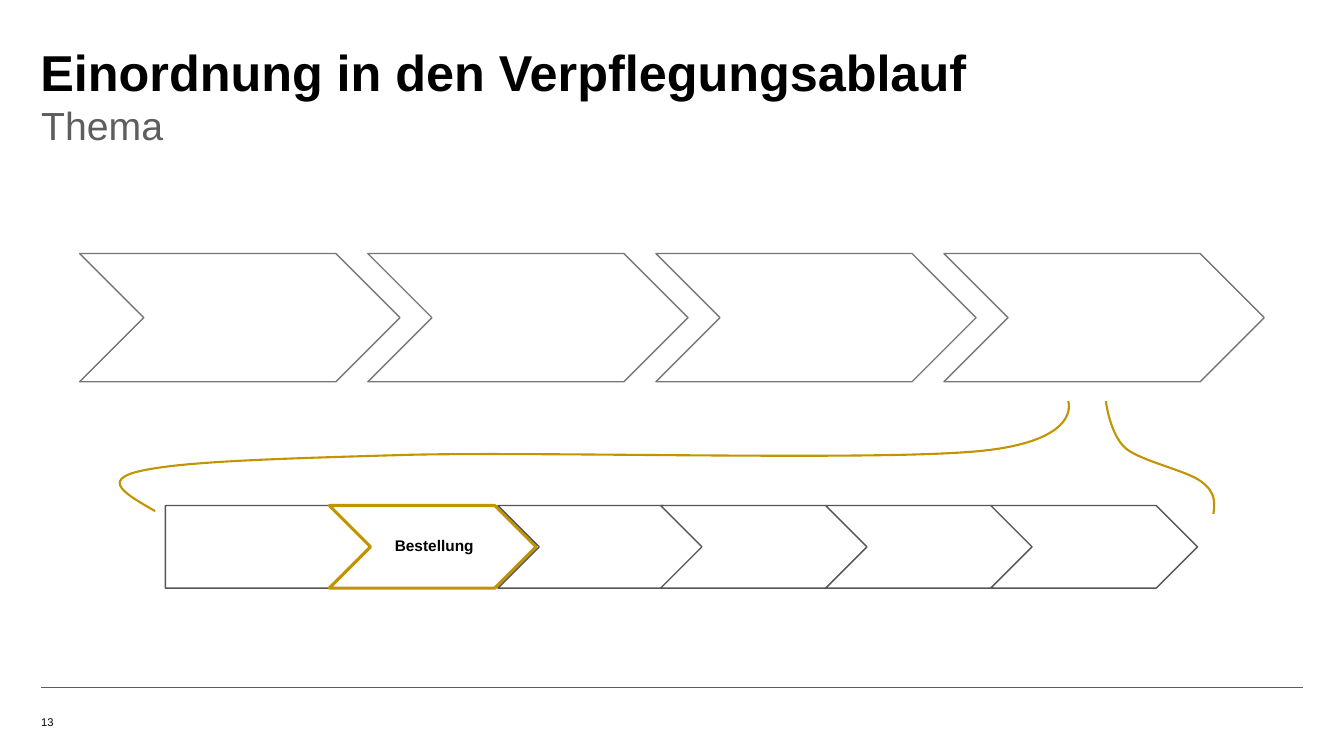
from dataclasses import dataclass

from lxml import etree
from pptx import Presentation
from pptx.dml.color import RGBColor
from pptx.enum.shapes import MSO_CONNECTOR, MSO_SHAPE
from pptx.enum.text import MSO_ANCHOR as Anchor, PP_ALIGN as Align
from pptx.oxml.ns import qn
from pptx.util import Cm, Pt


@dataclass(frozen=True)
class Theme:
    font: str = "Arial"
    black: str = "000000"
    white: str = "FFFFFF"
    muted: str = "5E5E5E"
    phase_line: str = "777777"
    step_line: str = "555555"
    accent: str = "C29401"
    title_size: int = 36
    subtitle_size: int = 28
    step_size: int = 11
    number_size: int = 8


THEME = Theme()
MARGIN = 1.04
STEP_LEFT, STEP_TOP, STEP_PITCH = 4.17, 12.74, 4.16
STEP_WIDTH, STEP_HEIGHT = 5.21, 2.08
STEP_COUNT, ORDER_STEP = 6, 1
STEP_SHIFTS = {ORDER_STEP: -0.03, ORDER_STEP + 1: 0.06}

LEFT_BRACE = (
    (3.02, 10.11, 23.9, 2.77),
    (3.91, 12.88),
    [
        ((3.2, 12.47), (2.49, 12.09), (3.58, 11.86)),
        ((4.65, 11.63), (6.86, 11.56), (10.36, 11.46)),
        ((13.84, 11.38), (21.79, 11.61), (24.54, 11.38)),
        ((27.31, 11.15), (26.92, 10.11), (26.92, 10.11)),
    ],
)
RIGHT_BRACE = (
    (27.87, 10.11, 2.72, 2.84),
    (30.58, 12.95),
    [
        ((30.61, 12.7), (30.66, 12.42), (30.28, 12.14)),
        ((29.92, 11.86), (28.78, 11.63), (28.37, 11.3)),
        ((27.97, 10.95), (27.87, 10.11), (27.87, 10.11)),
    ],
)


def rgb(value):
    return RGBColor.from_string(value)


def set_line(shape, color, width):
    shape.line.color.rgb = rgb(color)
    shape.line.width = Pt(width)


def add_text(slide, text, box, size, color=THEME.black, bold=False,
             align=Align.LEFT, anchor=Anchor.TOP, spacing=1.0, insets=(0, 0, 0, 0)):
    shape = slide.shapes.add_textbox(*map(Cm, box))
    frame = shape.text_frame
    frame.word_wrap = True
    frame.vertical_anchor = anchor
    (frame.margin_left, frame.margin_top,
     frame.margin_right, frame.margin_bottom) = map(Cm, insets)
    frame.text = text
    paragraph = frame.paragraphs[0]
    paragraph.alignment = align
    paragraph.line_spacing = spacing
    font = paragraph.runs[0].font
    font.name, font.size, font.bold = THEME.font, Pt(size), bold
    font.color.rgb = rgb(color)


def add_arrow(slide, kind, box, color, width=1):
    shape = slide.shapes.add_shape(kind, *map(Cm, box))
    shape.shadow.inherit = False
    shape.fill.solid()
    shape.fill.fore_color.rgb = rgb(THEME.white)
    set_line(shape, color, width)


def add_curve(slide, box, start, segments):
    left, top, width, height = map(Cm, box)
    builder = slide.shapes.build_freeform(*map(Cm, start))
    builder.add_line_segments(
        [tuple(map(Cm, segment[-1])) for segment in segments], close=False)
    shape = builder.convert_to_shape()
    shape.left, shape.top, shape.width, shape.height = left, top, width, height
    outline = next(shape._element.iter(qn("a:path")))
    for child in list(outline):
        outline.remove(child)
    outline.set("w", str(width))
    outline.set("h", str(height))
    commands = [("a:moveTo", (start,))]
    commands += [("a:cubicBezTo", segment) for segment in segments]
    for tag, points in commands:
        command = etree.SubElement(outline, qn(tag))
        for x, y in points:
            etree.SubElement(command, qn("a:pt"),
                             x=str(Cm(x) - left), y=str(Cm(y) - top))
    shape.shadow.inherit = False
    shape.fill.background()
    set_line(shape, THEME.accent, 1.5)


def add_footer(slide):
    rule = slide.shapes.add_connector(
        MSO_CONNECTOR.STRAIGHT, Cm(MARGIN), Cm(17.32), Cm(32.84), Cm(17.32))
    set_line(rule, THEME.muted, 0.5)
    etree.SubElement(rule._element.spPr, qn("a:effectLst"))
    add_text(slide, "13", (MARGIN, 17.55, 3.99, 0.81), THEME.number_size,
             anchor=Anchor.BOTTOM)


def add_phases(slide):
    for index in range(4):
        add_arrow(slide, MSO_SHAPE.CHEVRON, (2.01 + index * 7.26, 6.39, 8.07, 3.23),
                  THEME.phase_line)


def add_steps(slide):
    for index in range(STEP_COUNT):
        left = STEP_LEFT + index * STEP_PITCH + STEP_SHIFTS.get(index, 0)
        kind = MSO_SHAPE.CHEVRON if index else MSO_SHAPE.PENTAGON
        box = (left, STEP_TOP, STEP_WIDTH, STEP_HEIGHT)
        if index == ORDER_STEP:
            add_arrow(slide, kind, box, THEME.accent, 2.25)
            notch = STEP_HEIGHT / 2
            add_text(slide, "Bestellung",
                     (left + notch, STEP_TOP, STEP_WIDTH - 2 * notch, STEP_HEIGHT),
                     THEME.step_size, bold=True, align=Align.CENTER,
                     anchor=Anchor.MIDDLE, spacing=0.9,
                     insets=(0.13, 0.08, 0.05, 0.08))
        else:
            add_arrow(slide, kind, box, THEME.step_line)


def main():
    presentation = Presentation()
    presentation.slide_width = Cm(33.87)
    presentation.slide_height = Cm(19.05)
    slide = presentation.slides.add_slide(presentation.slide_layouts[6])
    add_footer(slide)
    add_text(slide, "Einordnung in den Verpflegungsablauf",
             (1.02, 1.04, 24.51, 1.57), THEME.title_size, bold=True)
    add_phases(slide)
    add_text(slide, "Thema", (MARGIN, 2.43, 24.51, 1.4), THEME.subtitle_size,
             color=THEME.muted, spacing=1.1)
    add_steps(slide)
    for brace in (LEFT_BRACE, RIGHT_BRACE):
        add_curve(slide, *brace)
    presentation.save("out.pptx")


if __name__ == "__main__":
    main()
